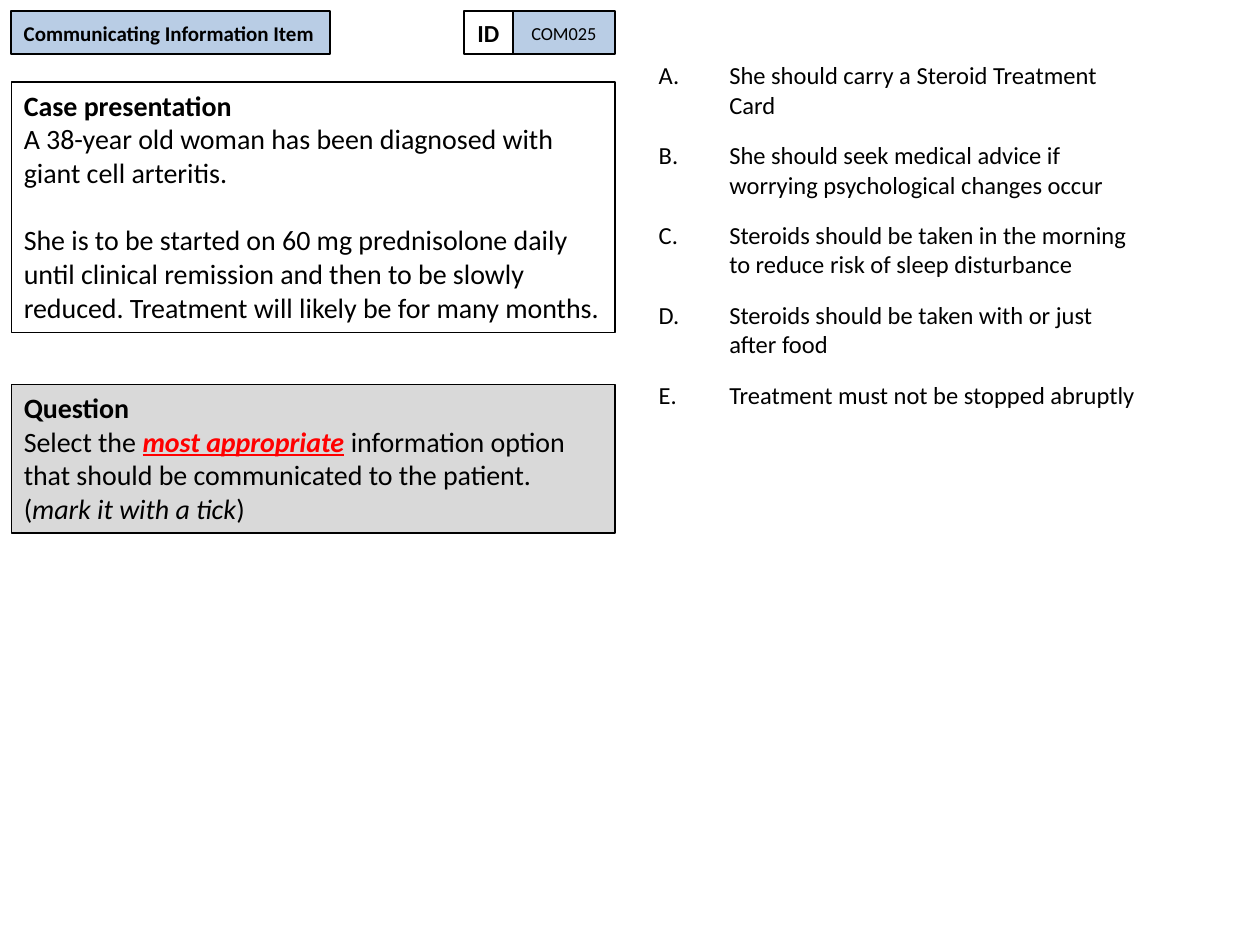
"""Build a clinical question slide with a case, a question and five options."""
from lxml.etree import SubElement
from pptx import Presentation
from pptx.dml.color import RGBColor
from pptx.enum.shapes import MSO_SHAPE
from pptx.enum.text import MSO_ANCHOR, PP_ALIGN
from pptx.oxml.ns import qn
from pptx.util import Inches, Pt

BLACK = RGBColor(0, 0, 0)
RED = RGBColor(0xFF, 0, 0)
BLUE = RGBColor(0xB9, 0xCD, 0xE5)
GREY = RGBColor(0xD9, 0xD9, 0xD9)

deck = Presentation()
deck.slide_width, deck.slide_height = Inches(10), Inches(7.5)
slide = deck.slides.add_slide(deck.slide_layouts[6])


def place(left, top, width, height):
    wide, high = deck.slide_width / 100, deck.slide_height / 100
    return [int(n) for n in (left * wide, top * high, width * wide, height * high)]


def write(para, text, size, style=""):
    run = para.add_run()
    run.text = text
    font = run.font
    font.name, font.size = "Calibri", Pt(size)
    font.bold, font.italic = "b" in style, "i" in style
    font.underline = "u" in style
    font.color.rgb = RED if "r" in style else BLACK


options = [
    "She should carry a Steroid Treatment Card\u00a0".strip(),
    "She should seek medical advice if worrying psychological changes occur",
    "Steroids should be taken in the morning to reduce risk of sleep disturbance",
    "Steroids should be taken with or just after food",
    "Treatment must not be stopped abruptly",
]
frame = slide.shapes.add_textbox(*place(51.3, 5.73, 40.4, 83.6)).text_frame
frame.word_wrap = True
for row, text in enumerate(options):
    para = frame.paragraphs[0] if row == 0 else frame.add_paragraph()
    props = para._p.get_or_add_pPr()
    props.set("marL", str(Inches(0.56)))
    props.set("indent", str(-Inches(0.56)))
    if row:
        para.space_before = Pt(12)
    SubElement(props, qn("a:buFont"), typeface="+mj-lt")
    SubElement(props, qn("a:buAutoNum"), type="alphaUcPeriod")
    write(para, text, 14)

LEFT, WIDE = 0.9, 47.9
TOP, TALL = 1.2, 4.53
title = [[("Communicating Information Item", "b")]]
case = [
    [("Case presentation", "b")],
    [("A 38-year old woman has been diagnosed with giant cell arteritis.", "")],
    [("She is to be started on 60 mg prednisolone daily until clinical remission "
      "and then to be slowly reduced. Treatment will likely be for many months.", "")],
]
ask = [
    [("Question", "b")],
    [("Select the ", ""), ("most appropriate", "biur"), (" ", "bir"),
     ("information option that should be communicated to the patient.", "")],
    [("(", ""), ("mark it with a tick", "i"), (")", "")],
]
boxes = [
    ((LEFT, TOP, 25.3, TALL), BLUE, 1, 12, False, title),
    ((40.7, TOP, 8.1, TALL), BLUE, 1, 10.5, True, [[("COM025", "")]]),
    ((36.8, TOP, 3.9, TALL), None, 1, 14, True, [[("ID", "b")]]),
    ((LEFT, 8.67, WIDE, 26.53), None, 0.75, 16, False, case),
    ((LEFT, 40.67, WIDE, 15.73), GREY, 0.75, 16, False, ask),
]
for spot, fill, line, size, mid, paras in boxes:
    box = slide.shapes.add_shape(MSO_SHAPE.RECTANGLE, *place(*spot))
    box.shadow.inherit = False
    if fill is None:
        box.fill.background()
    else:
        box.fill.solid()
        box.fill.fore_color.rgb = fill
    box.line.color.rgb, box.line.width = BLACK, Pt(line)
    frame = box.text_frame
    frame.word_wrap = True
    frame.vertical_anchor = MSO_ANCHOR.TOP if size == 16 else MSO_ANCHOR.MIDDLE
    if mid:
        frame.margin_left = frame.margin_right = 0
    for row, runs in enumerate(paras):
        para = frame.paragraphs[0] if row == 0 else frame.add_paragraph()
        para.alignment = PP_ALIGN.CENTER if mid else PP_ALIGN.LEFT
        if paras is case and row == 2:
            para.space_before = Pt(19.5)
        for text, style in runs:
            write(para, text, size, style)

deck.save("out.pptx")
